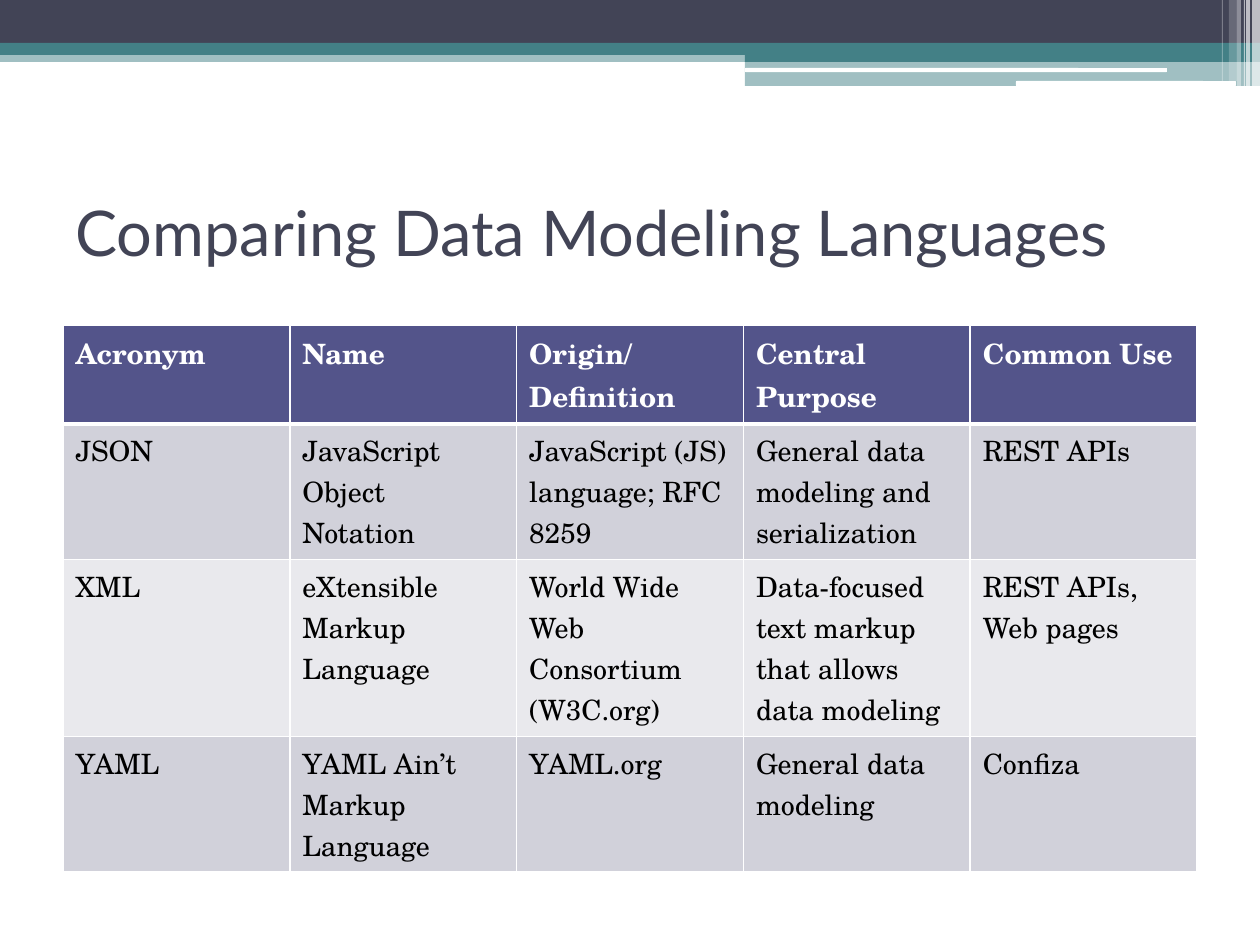
from lxml.etree import SubElement
from pptx import Presentation
from pptx.dml.color import RGBColor
from pptx.enum.shapes import MSO_SHAPE
from pptx.enum.text import MSO_ANCHOR, PP_ALIGN
from pptx.oxml.ns import qn
from pptx.util import Emu, Pt

THEME = {
    "slate": "424456", "teal": "438086", "white": "FFFFFF", "black": "000000",
    "header": "53548A", "bands": ("D1D1DA", "E9E9ED"),
    "title_font": "Lato", "title_size": 36,
    "table_font": "TeX Gyre Schola", "table_size": 16,
}
PX = 914400 / 126


def px(*lengths):
    return [Emu(round(length * PX)) for length in lengths]


def format_text(para, font, size, color, bold):
    values = {"name": font, "size": Pt(size), "bold": bold}
    for span in para.runs:
        for name, value in values.items():
            setattr(span.font, name, value)
        span.font.color.rgb = RGBColor.from_string(color)


deck = Presentation()
deck.slide_width, deck.slide_height = px(1260, 945)
page = deck.slides.add_slide(deck.slide_layouts[5])

RECT, ROUND = MSO_SHAPE.RECTANGLE, MSO_SHAPE.ROUNDED_RECTANGLE
bars = [
    (RECT, 0, 50, 1260, 12, "teal", 50),
    (RECT, 0, 0, 1260, 43, "slate", 100),
    (RECT, 0, 43, 1260, 12, "teal", 100),
    (RECT, 745, 49, 515, 13, "teal", 100),
    (RECT, 745, 61, 515, 25, "teal", 50),
    (ROUND, 745, 68, 422, 4, "white", 100),
    (ROUND, 1016, 81, 220, 5, "white", 100),
]
stripes = [
    (1252, 8, 86, 65), (1246, 4, 86, 65), (1244, 1, 86, 60),
    (1237, 4, 86, 40), (1229, 8, 81, 20), (1222, 1, 81, 30),
]
bars += [(RECT, left, 0, width, height, "white", opacity) for left, width, height, opacity in stripes]

for kind, left, top, width, height, color, opacity in bars:
    bar = page.shapes.add_shape(kind, *px(left, top, width, height))
    bar.shadow.inherit = False
    bar.line.fill.background()
    bar.fill.solid()
    bar.fill.fore_color.rgb = RGBColor.from_string(THEME[color])
    if opacity < 100:
        color_node = bar.fill._xPr.find(qn("a:solidFill"))[0]
        SubElement(color_node, qn("a:alpha"), val=str(opacity * 1000))

title = page.shapes.title
title.left, title.top, title.width, title.height = px(63, 157, 1134, 148)
title.text_frame.text = "Comparing Data Modeling Languages"
title.text_frame.vertical_anchor = MSO_ANCHOR.MIDDLE
para = title.text_frame.paragraphs[0]
para.alignment = PP_ALIGN.LEFT
format_text(para, THEME["title_font"], THEME["title_size"], THEME["slate"], False)

rows = [
    ("Acronym", "Name", "Origin/\nDefinition", "Central Purpose", "Common Use"),
    ("JSON", "JavaScript Object Notation", "JavaScript (JS) language; RFC 8259",
     "General data modeling and serialization", "REST APIs"),
    ("XML", "eXtensible Markup Language", "World Wide Web Consortium (W3C.org)",
     "Data-focused text markup that allows data modeling", "REST APIs, Web pages"),
    ("YAML", "YAML Ain’t Markup Language", "YAML.org", "General data modeling", "Confiza"),
]
row_heights = px(99, 135, 177, 134)
table = page.shapes.add_table(len(rows), len(rows[0]), *px(63, 325, 1134, 545)).table
for row, height in zip(table.rows, row_heights):
    row.height = height

for row_index, texts in enumerate(rows):
    is_header = row_index == 0
    fill = THEME["header"] if is_header else THEME["bands"][(row_index - 1) % 2]
    color = THEME["white"] if is_header else THEME["black"]
    borders = {"lnL": 1, "lnR": 1, "lnT": 3 if row_index == 1 else 1, "lnB": 3 if is_header else 1}
    for column_index, text in enumerate(texts):
        cell = table.cell(row_index, column_index)
        para = cell.text_frame.paragraphs[0]
        para.text = text
        format_text(para, THEME["table_font"], THEME["table_size"], color, is_header)
        properties = cell._tc.get_or_add_tcPr()
        for side, width in borders.items():
            line = SubElement(properties, qn(f"a:{side}"), w=str(Pt(width)))
            SubElement(SubElement(line, qn("a:solidFill")), qn("a:srgbClr"), val=THEME["white"])
        cell.fill.solid()
        cell.fill.fore_color.rgb = RGBColor.from_string(fill)

deck.save("out.pptx")
